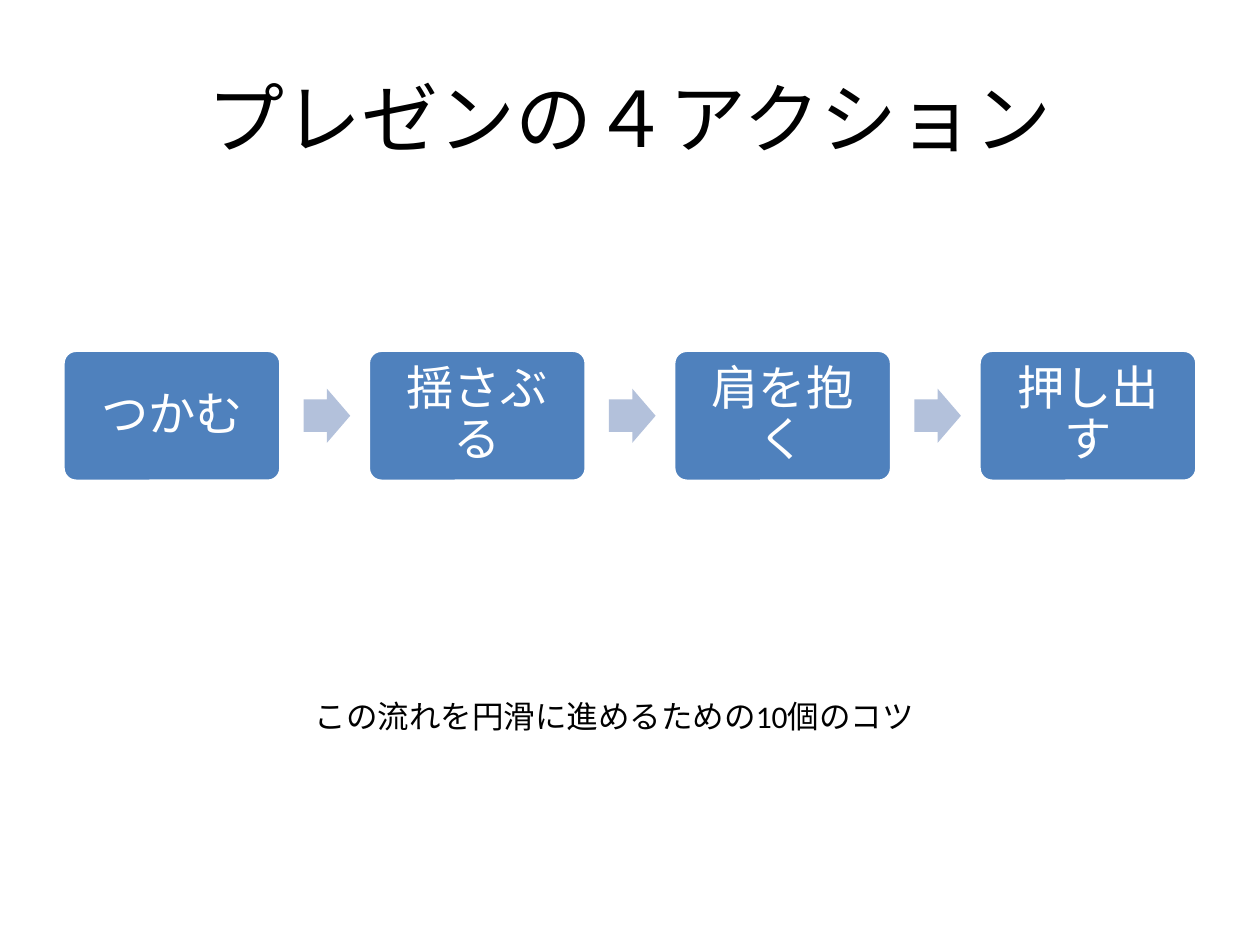
from typing import NamedTuple

from pptx import Presentation
from pptx.dml.color import RGBColor
from pptx.enum.shapes import MSO_SHAPE
from pptx.enum.text import MSO_ANCHOR, PP_ALIGN
from pptx.util import Inches, Pt

BLACK = RGBColor(0x00, 0x00, 0x00)
WHITE = RGBColor(0xFF, 0xFF, 0xFF)
STEP_BLUE = RGBColor(0x4F, 0x81, 0xBD)
ARROW_BLUE = RGBColor(0xB3, 0xC1, 0xDB)
FONT = "Calibri"

ACTIONS = ["つかむ", "揺さぶる", "肩を抱く", "押し出す"]
FLOW_LEFT, FLOW_WIDTH = 0.5, 9
STEP_TOP, STEP_WIDTH, STEP_HEIGHT = 2.78, 1.73, 1.04
ARROW_WIDTH, ARROW_HEIGHT, ARROW_GAP = 0.37, 0.43, 0.18
PITCH = (FLOW_WIDTH - STEP_WIDTH) / (len(ACTIONS) - 1)


class Box(NamedTuple):
    left: float
    top: float
    width: float
    height: float

    def lengths(self) -> list:
        return [Inches(v) for v in self]


def write(s, text: str, size: int, color: RGBColor, align, anchor) -> None:
    tf = s.text_frame
    tf.word_wrap = True
    tf.vertical_anchor = anchor
    p = tf.paragraphs[0]
    p.alignment = align
    r = p.add_run()
    r.text = text
    for name, value in {"name": FONT, "size": Pt(size)}.items():
        setattr(r.font, name, value)
    r.font.color.rgb = color


def add_text(slide, box: Box, text: str, size: int, align, anchor) -> None:
    sp = slide.shapes.add_textbox(*box.lengths())
    write(sp, text, size, BLACK, align, anchor)


def add_preset(slide, kind, box: Box, adjustments: list[float], fill: RGBColor):
    sp = slide.shapes.add_shape(kind, *box.lengths())
    sp.shadow.inherit = False
    for i, value in enumerate(adjustments):
        sp.adjustments[i] = value
    sp.fill.solid()
    sp.fill.fore_color.rgb = fill
    sp.line.fill.background()
    return sp


def add_step(slide, left: float, text: str) -> None:
    box = Box(left, STEP_TOP, STEP_WIDTH, STEP_HEIGHT)
    sp = add_preset(slide, MSO_SHAPE.ROUNDED_RECTANGLE, box, [0.1], STEP_BLUE)
    sp.line.color.rgb = WHITE
    sp.line.width = Pt(2)
    write(sp, text, 27, WHITE, PP_ALIGN.CENTER, MSO_ANCHOR.MIDDLE)
    for side in ("left", "top", "right", "bottom"):
        setattr(sp.text_frame, f"margin_{side}", Inches(0.13))
    sp.text_frame.paragraphs[0].line_spacing = 0.9


def add_arrow(slide, left: float) -> None:
    top = STEP_TOP + (STEP_HEIGHT - ARROW_HEIGHT) / 2
    box = Box(left, top, ARROW_WIDTH, ARROW_HEIGHT)
    add_preset(slide, MSO_SHAPE.RIGHT_ARROW, box, [0.6, 0.5], ARROW_BLUE)


def main() -> None:
    prs = Presentation()
    prs.slide_width, prs.slide_height = Inches(10), Inches(7.5)
    slide = prs.slides.add_slide(prs.slide_layouts[6])

    add_text(slide, Box(0.5, 0.3, 9, 1.25), "プレゼンの４アクション", 44,
             PP_ALIGN.CENTER, MSO_ANCHOR.MIDDLE)
    for i, action in enumerate(ACTIONS):
        left = FLOW_LEFT + i * PITCH
        add_step(slide, left, action)
        if i < len(ACTIONS) - 1:
            add_arrow(slide, left + STEP_WIDTH + ARROW_GAP)
    add_text(slide, Box(2.4, 5.48, 5, 0.4), "この流れを円滑に進めるための10個のコツ", 18,
             PP_ALIGN.LEFT, MSO_ANCHOR.TOP)

    prs.save("out.pptx")


if __name__ == "__main__":
    main()
